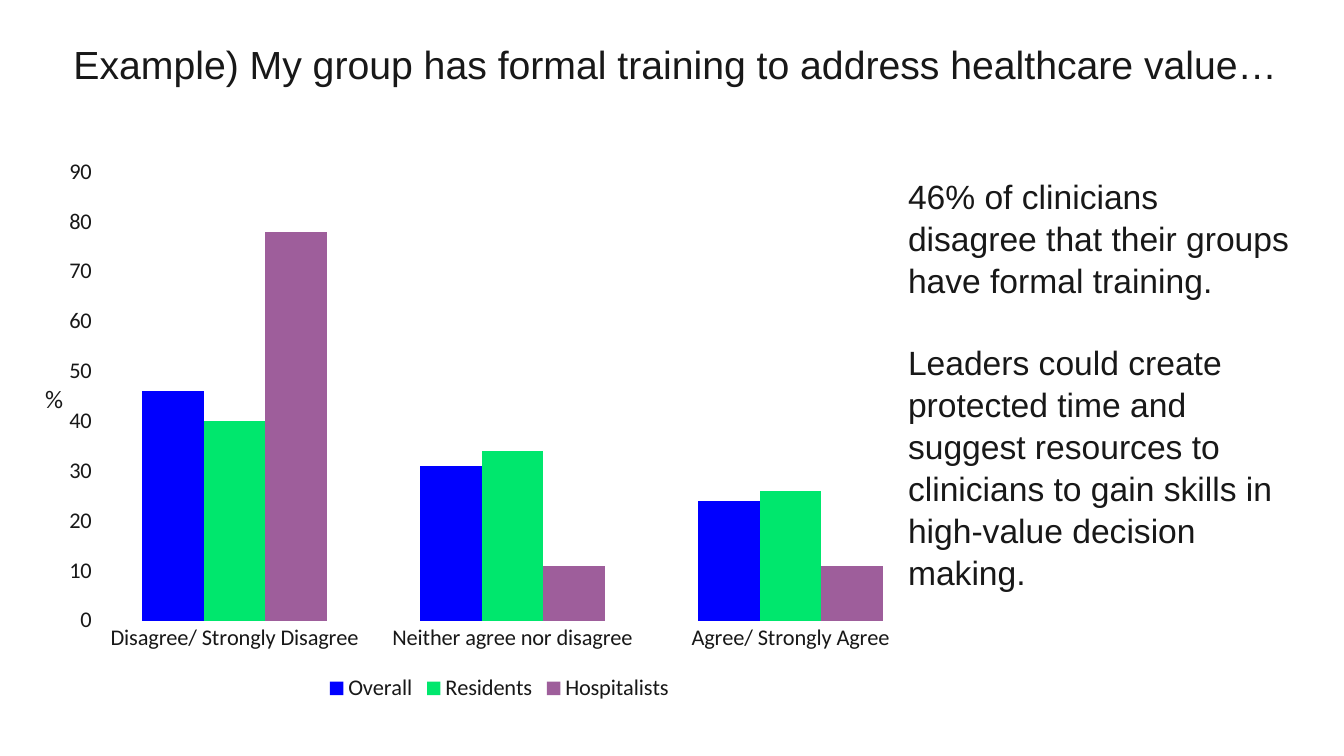
from pptx import Presentation
from pptx.chart.data import CategoryChartData
from pptx.dml.color import RGBColor
from pptx.enum.chart import XL_CHART_TYPE, XL_LEGEND_POSITION, XL_TICK_MARK
from pptx.enum.text import MSO_AUTO_SIZE
from pptx.util import Pt

INK = RGBColor(0x18, 0x18, 0x18)
BLUE = RGBColor(0x00, 0x00, 0xFF)
GREEN = RGBColor(0x00, 0xE7, 0x6D)
PURPLE = RGBColor(0x9E, 0x5E, 0x9B)

ANSWERS = ["Disagree/ Strongly Disagree", "Neither agree nor disagree", "Agree/ Strongly Agree"]
GROUPS = [
    ("Overall", (46, 31, 24), BLUE),
    ("Residents", (40, 34, 26), GREEN),
    ("Hospitalists", (78, 11, 11), PURPLE),
]
FINDINGS = [
    "46% of clinicians disagree that their groups have formal training.",
    "Leaders could create protected time and suggest resources to clinicians "
    "to gain skills in high-value decision making.",
]


class SurveySlide:
    text_font = "Arial"
    chart_font = "Calibri"

    def __init__(self, slide):
        self.slide = slide

    def style(self, font, size, name):
        font.size = Pt(size)
        font.name = name
        font.color.rgb = INK

    def text(self, box, paragraphs, size, name, wrap=True, spacing=None, gap=0):
        frame = self.slide.shapes.add_textbox(*map(Pt, box)).text_frame
        frame.word_wrap = wrap
        frame.auto_size = MSO_AUTO_SIZE.SHAPE_TO_FIT_TEXT
        for index, wording in enumerate(paragraphs):
            paragraph = frame.add_paragraph() if index else frame.paragraphs[0]
            paragraph.text = wording
            self.style(paragraph.font, size, name)
            if spacing:
                paragraph.line_spacing = spacing
            if index:
                paragraph.space_before = Pt(gap)

    def columns(self, box, answers, groups):
        data = CategoryChartData(number_format="0")
        data.categories = answers
        for group, shares, _ in groups:
            data.add_series(group, shares)
        chart = self.slide.shapes.add_chart(
            XL_CHART_TYPE.COLUMN_CLUSTERED, *map(Pt, box), data
        ).chart
        self.style(chart.font, 16, self.chart_font)
        chart.has_title = False
        chart.has_legend = True
        chart.legend.position = XL_LEGEND_POSITION.BOTTOM
        chart.legend.include_in_layout = False
        self.style(chart.legend.font, 16, self.chart_font)
        for axis in (chart.category_axis, chart.value_axis):
            axis.has_major_gridlines = False
            axis.major_tick_mark = XL_TICK_MARK.NONE
            axis.minor_tick_mark = XL_TICK_MARK.NONE
            axis.format.line.fill.background()
            self.style(axis.tick_labels.font, 16, self.chart_font)
        chart.value_axis.minimum_scale = 0
        chart.value_axis.maximum_scale = 90
        chart.value_axis.major_unit = 10
        plot = chart.plots[0]
        plot.gap_width = 150
        plot.overlap = 0
        plot.vary_by_categories = False
        for series, (_, _, color) in zip(plot.series, groups):
            series.format.fill.solid()
            series.format.fill.fore_color.rgb = color


def main():
    presentation = Presentation()
    presentation.slide_width = Pt(960)
    presentation.slide_height = Pt(540)
    survey = SurveySlide(presentation.slides.add_slide(presentation.slide_layouts[6]))
    survey.text(
        (45.4, 23, 877, 44),
        ["Example) My group has formal training to address healthcare value…"],
        28, survey.text_font, spacing=1.07,
    )
    survey.columns((36.7, 105.1, 640, 399.6), ANSWERS, GROUPS)
    survey.text(
        (641.5, 121, 288.7, 298), FINDINGS, 24, survey.text_font, spacing=1.045, gap=28.8
    )
    survey.text((25.2, 270, 27.4, 28.8), ["%"], 18, survey.chart_font, wrap=False)
    presentation.save("out.pptx")


if __name__ == "__main__":
    main()
